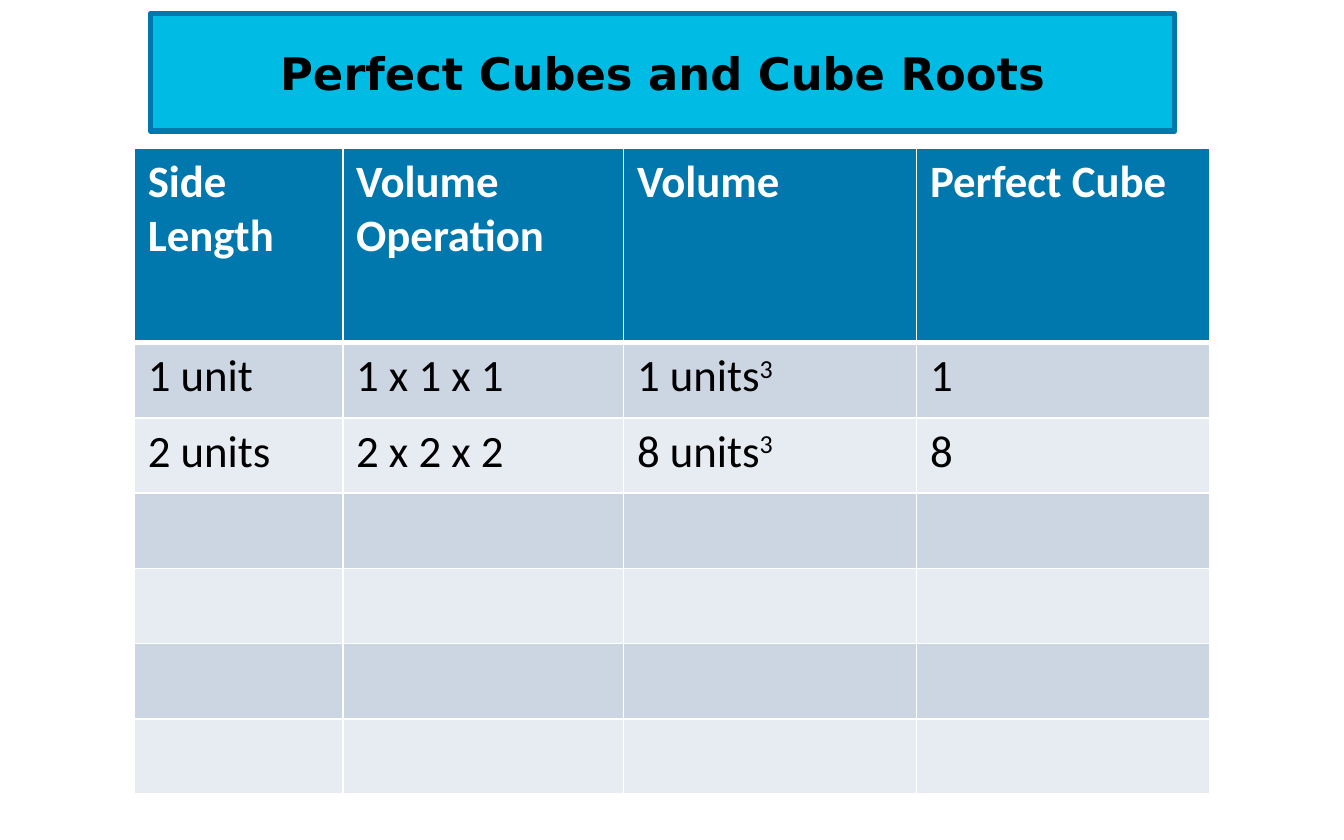
from typing import NamedTuple

from lxml import etree
from pptx import Presentation
from pptx.dml.color import RGBColor
from pptx.enum.shapes import MSO_SHAPE
from pptx.enum.text import MSO_ANCHOR, PP_ALIGN
from pptx.oxml.ns import qn
from pptx.util import Inches, Pt

RECTANGLE = MSO_SHAPE.RECTANGLE
MIDDLE = MSO_ANCHOR.MIDDLE
CENTER = PP_ALIGN.CENTER

BLACK = RGBColor(0x00, 0x00, 0x00)
WHITE = RGBColor(0xFF, 0xFF, 0xFF)
CYAN = RGBColor(0x00, 0xBC, 0xE4)
BLUE = RGBColor(0x00, 0x78, 0xAE)
BANDS = (RGBColor(0xCC, 0xD6, 0xE3), RGBColor(0xE7, 0xEC, 0xF2))

SLIDE_WIDTH, SLIDE_HEIGHT = Inches(10), Inches(6.25)
TEXT_SIZE = Pt(24)
GRID_LINE, HEADER_LINE = Pt(1), Pt(3)

TITLE = "Perfect Cubes and Cube Roots"
HEADINGS = ("Side Length", "Volume Operation", "Volume", "Perfect Cube")
COLUMN_WIDTHS = tuple(map(Inches, (1.55, 2.09, 2.18, 2.18)))
HEADER_HEIGHT, ROW_HEIGHT = Inches(1.45), Inches(0.56)
BLANK_ROWS = 4


class Cube(NamedTuple):
    side: int
    unit: str

    def cells(self) -> tuple[tuple[str, ...], ...]:
        """Give each column's text; a second string in a cell is superscript."""
        volume = self.side ** 3
        return (
            (f"{self.side} {self.unit}",),
            (" x ".join([str(self.side)] * 3),),
            (f"{volume} units", "3"),
            (str(volume),),
        )


CUBES = (Cube(1, "unit"), Cube(2, "units"))


def add_run(paragraph, text: str, color: RGBColor, bold: bool = False,
            font_name: str = "Calibri", superscript: bool = False) -> None:
    run = paragraph.add_run()
    run.text = text
    run.font.name = font_name
    run.font.size = TEXT_SIZE
    run.font.bold = bold
    run.font.color.rgb = color
    if superscript:
        run._r.get_or_add_rPr().set("baseline", "30000")


def set_borders(cell, top: int, bottom: int) -> None:
    """Draw white borders, placed ahead of the fill as the schema requires."""
    properties = cell._tc.get_or_add_tcPr()
    widths = (("L", GRID_LINE), ("R", GRID_LINE), ("T", top), ("B", bottom))
    for position, (side, width) in enumerate(widths):
        line = etree.Element(qn(f"a:ln{side}"), w=str(width))
        fill = etree.SubElement(line, qn("a:solidFill"))
        etree.SubElement(fill, qn("a:srgbClr"), val=str(WHITE))
        properties.insert(position, line)


def add_title(slide) -> None:
    banner = slide.shapes.add_shape(
        RECTANGLE, int(SLIDE_WIDTH * 0.112), int(SLIDE_HEIGHT * 0.016),
        int(SLIDE_WIDTH * 0.762), int(SLIDE_HEIGHT * 0.14))
    banner.shadow.inherit = False
    banner.fill.solid()
    banner.fill.fore_color.rgb = CYAN
    banner.line.color.rgb = BLUE
    banner.line.width = Pt(3)
    banner.text_frame.word_wrap = True
    banner.text_frame.vertical_anchor = MIDDLE
    paragraph = banner.text_frame.paragraphs[0]
    paragraph.alignment = CENTER
    add_run(paragraph, TITLE, BLACK, bold=True, font_name="DejaVu Sans")


def add_cube_table(slide) -> None:
    body = [cube.cells() for cube in CUBES]
    body += [((),) * len(HEADINGS)] * BLANK_ROWS
    rows = [tuple((heading,) for heading in HEADINGS), *body]
    table = slide.shapes.add_table(
        len(rows), len(HEADINGS), int(SLIDE_WIDTH * 0.1), int(SLIDE_HEIGHT * 0.176),
        sum(COLUMN_WIDTHS), HEADER_HEIGHT + ROW_HEIGHT * len(body)).table
    for column, width in zip(table.columns, COLUMN_WIDTHS):
        column.width = width

    for row_index, row in enumerate(rows):
        is_header = row_index == 0
        table.rows[row_index].height = HEADER_HEIGHT if is_header else ROW_HEIGHT
        for column_index, texts in enumerate(row):
            cell = table.cell(row_index, column_index)
            cell.fill.solid()
            cell.fill.fore_color.rgb = BLUE if is_header else BANDS[(row_index - 1) % 2]
            set_borders(cell,
                        top=HEADER_LINE if row_index == 1 else GRID_LINE,
                        bottom=HEADER_LINE if is_header else GRID_LINE)
            paragraph = cell.text_frame.paragraphs[0]
            for part, text in enumerate(texts):
                add_run(paragraph, text, WHITE if is_header else BLACK,
                        bold=is_header, superscript=part == 1)


def main() -> None:
    presentation = Presentation()
    presentation.slide_width, presentation.slide_height = SLIDE_WIDTH, SLIDE_HEIGHT
    slide = presentation.slides.add_slide(presentation.slide_layouts[6])
    add_title(slide)
    add_cube_table(slide)
    presentation.save("out.pptx")


if __name__ == "__main__":
    main()
